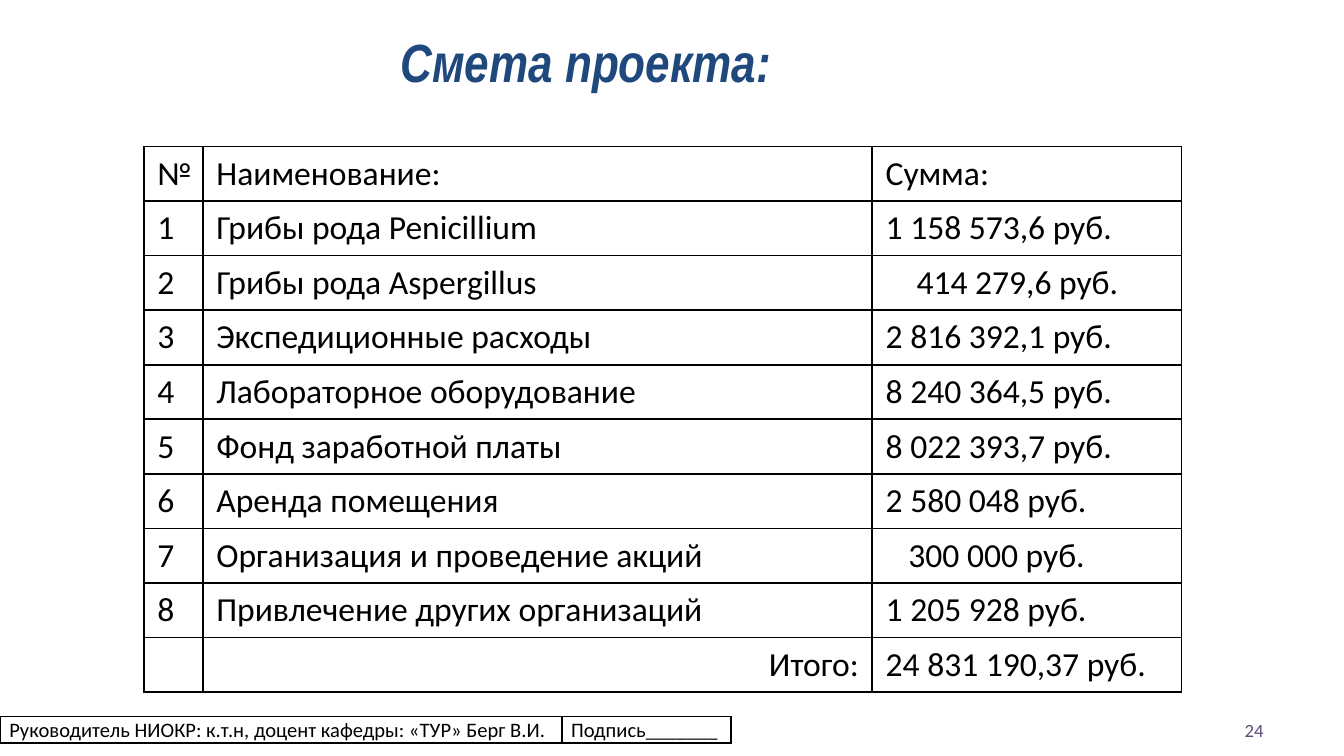
from typing import NamedTuple

from lxml import etree
from pptx import Presentation
from pptx.dml.color import RGBColor
from pptx.enum import text
from pptx.oxml import ns
from pptx.util import Inches, Pt

BLACK = RGBColor(0x00, 0x00, 0x00)
NAVY = RGBColor(0x1F, 0x49, 0x7D)
PLUM = RGBColor(0x60, 0x4A, 0x7B)
LEFT, MID, RIGHT = text.PP_ALIGN.LEFT, text.PP_ALIGN.CENTER, text.PP_ALIGN.RIGHT


class Box(NamedTuple):
    x: float
    y: float
    w: float
    h: float


class Style(NamedTuple):
    size: float
    face: str = "Calibri"
    color: RGBColor = BLACK
    strong: bool = False  # bold italic
    align: text.PP_ALIGN = LEFT


class Item(NamedTuple):
    name: str
    sum: str
    indent: float = 0


ITEMS = [
    Item("Грибы рода Penicillium", "1 158 573,6 руб."),
    Item("Грибы рода Aspergillus", "414 279,6 руб.", 0.23),
    Item("Экспедиционные расходы", "2 816 392,1 руб."),
    Item("Лабораторное оборудование", "8 240 364,5 руб."),
    Item("Фонд заработной платы", "8 022 393,7 руб."),
    Item("Аренда помещения", "2 580 048 руб."),
    Item("Организация и проведение акций", "300 000 руб.", 0.17),
    Item("Привлечение других организаций", "1 205 928 руб."),
]


def put(frame, words: str, style: Style) -> None:
    para = frame.paragraphs[0]
    para.text = words
    para.alignment = style.align
    font = para.font
    font.size, font.name = Pt(style.size), style.face
    font.bold = font.italic = style.strong
    font.color.rgb = style.color


def add_label(slide, box: Box, words: str, style: Style) -> None:
    frame = slide.shapes.add_textbox(*map(Inches, box)).text_frame
    frame.word_wrap = True
    frame.vertical_anchor = text.MSO_ANCHOR.MIDDLE
    put(frame, words, style)


def add_edges(cell) -> None:
    props = cell._tc.get_or_add_tcPr()
    for side in ("lnL", "lnR", "lnT", "lnB"):
        line = etree.SubElement(props, ns.qn(f"a:{side}"), w=str(Pt(1)))
        fill = etree.SubElement(line, ns.qn("a:solidFill"))
        etree.SubElement(fill, ns.qn("a:srgbClr"), val=str(BLACK))


def add_grid(slide, box: Box, cols: list[float], rows: list[list[str]], style: Style):
    shape = slide.shapes.add_table(len(rows), len(cols), *map(Inches, box))
    table = shape.table
    table.first_row = table.horz_banding = False
    for col, width in zip(table.columns, cols):
        col.width = Inches(width)
    for r, row in enumerate(rows):
        for c, words in enumerate(row):
            cell = table.cell(r, c)
            add_edges(cell)
            cell.fill.background()
            put(cell.text_frame, words, style)
    return table


def main() -> None:
    # Widescreen, 16 to 9
    deck = Presentation()
    deck.slide_width = Inches(10)
    deck.slide_height = Inches(10 * 9 / 16)
    slide = deck.slides.add_slide(deck.slide_layouts[6])

    # Title and page number
    add_label(slide, Box(0, 0.23, 8.72, 0.45), "Смета проекта:",
              Style(28.8, "Arial Narrow", NAVY, True, MID))
    add_label(slide, Box(7.17, 5.28, 2.33, 0.3), "24",
              Style(10, color=PLUM, align=RIGHT))

    # Budget
    rows = [["№", "Наименование:", "Сумма:"]]
    rows += [[str(n), item.name, item.sum] for n, item in enumerate(ITEMS, 1)]
    rows.append(["", "Итого:", "24 831 190,37 руб."])
    budget = add_grid(slide, Box(1.07, 1.09, 7.72, 4.06), [0.44, 4.98, 2.3],
                      rows, Style(18))
    for n, item in enumerate(ITEMS, 1):
        budget.cell(n, 2).margin_left = Inches(0.1 + item.indent)
    budget.cell(len(rows) - 1, 1).text_frame.paragraphs[0].alignment = RIGHT

    # Signature strip
    strip = add_grid(slide, Box(0, 5.33, 5.44, 0.2), [4.18, 1.26],
                     [["Руководитель НИОКР: к.т.н, доцент кафедры: «ТУР» Берг В.И.",
                       "Подпись_______"]], Style(11))
    for cell in strip.iter_cells():
        cell.margin_left = cell.margin_right = Inches(0.07)
        cell.margin_top = cell.margin_bottom = 0
        cell.text_frame.paragraphs[0].line_spacing = 1.07

    deck.save("out.pptx")


if __name__ == "__main__":
    main()
